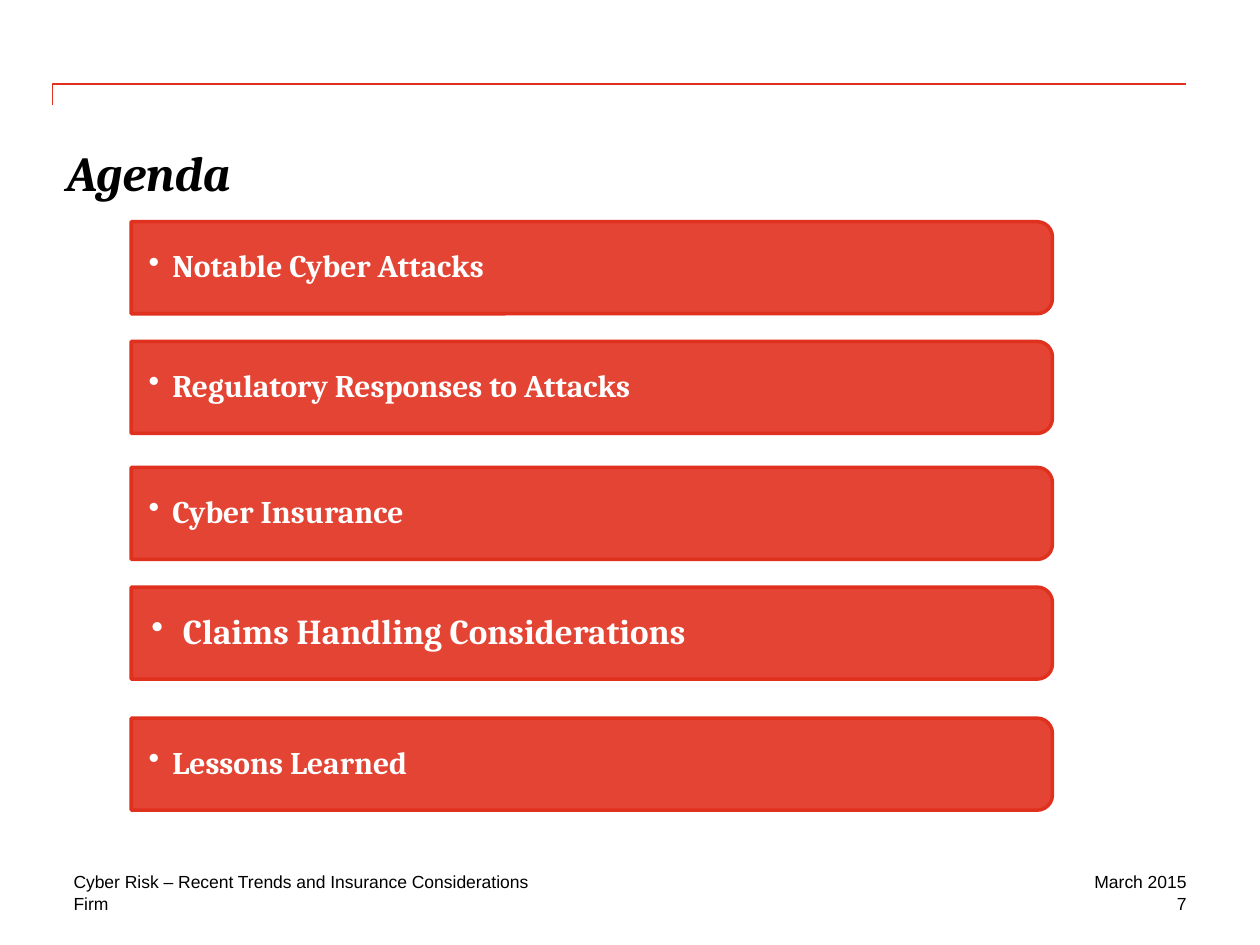
from dataclasses import dataclass

import lxml.etree
import pptx
import pptx.dml.color
import pptx.enum.shapes
import pptx.enum.text
import pptx.oxml.ns
import pptx.util

Pt = pptx.util.Pt
qn = pptx.oxml.ns.qn
ALIGN = pptx.enum.text.PP_ALIGN
ANCHOR = pptx.enum.text.MSO_ANCHOR
SHAPE = pptx.enum.shapes.MSO_SHAPE
CONNECTOR = pptx.enum.shapes.MSO_CONNECTOR

COLORS = {"red": "E0301E", "text": "000000", "bar_text": "FFFFFF"}
BAR_LEFT, BAR_WIDTH, BAR_HEIGHT = 75, 526.4, 52.6
LABEL_WIDTH, LABEL_HEIGHT = 524, 47.5


@dataclass
class AgendaItem:
    text: str
    top: float
    size: float = 18
    inset: float = 10
    indent: float = 13.5


@dataclass
class FooterText:
    text: str
    left: float
    top: float
    width: float
    align: ALIGN = ALIGN.LEFT
    anchor: ANCHOR = ANCHOR.TOP


AGENDA = [
    AgendaItem("Notable Cyber Attacks", 126.7),
    AgendaItem("Regulatory Responses to Attacks", 195.1),
    AgendaItem("Cyber Insurance", 267.1),
    AgendaItem("Claims Handling Considerations", 335.5, 20, 11.5, 18),
    AgendaItem("Lessons Learned", 410.4),
]
FOOTERS = [
    FooterText("Firm", 42, 510, 204),
    FooterText("7", 558, 510, 120, ALIGN.RIGHT),
    FooterText("March 2015", 558, 498, 120, ALIGN.RIGHT),
    FooterText("Cyber Risk – Recent Trends and Insurance Considerations",
               42, 498, 414, anchor=ANCHOR.BOTTOM),
]


def rgb(name: str) -> pptx.dml.color.RGBColor:
    return pptx.dml.color.RGBColor.from_string(COLORS[name])


def set_text(sp, text: str, font: str, size: float, color: str,
             bold: bool = False, italic: bool = False,
             insets: tuple = (0, 0, 0, 0), anchor: ANCHOR = ANCHOR.TOP):
    tf = sp.text_frame
    tf.word_wrap = True
    tf.auto_size = pptx.enum.text.MSO_AUTO_SIZE.NONE
    tf.vertical_anchor = anchor
    tf.margin_left, tf.margin_top, tf.margin_right, tf.margin_bottom = map(Pt, insets)
    tf.text = text
    p = tf.paragraphs[0]
    f = p.runs[0].font
    f.name, f.size, f.bold, f.italic = font, Pt(size), bold, italic
    f.color.rgb = rgb(color)
    return p


def add_title(s, text: str) -> None:
    sp = s.shapes.title
    sp.left, sp.top, sp.width, sp.height = Pt(38), Pt(81.5), Pt(644), Pt(33)
    p = set_text(sp, text, "Cambria", 28, "text", bold=True, italic=True)
    p.alignment = ALIGN.LEFT


def add_header_rule(s) -> None:
    cx = s.shapes.add_connector(CONNECTOR.ELBOW, Pt(360), Pt(378), Pt(348), Pt(-270))
    cx.line.color.rgb = rgb("red")
    cx.line.width = Pt(1)
    sp_pr = cx._element.spPr
    sp_pr.find(qn("a:xfrm")).set("rot", "5400000")
    sp_pr.find(qn("a:prstGeom")).set("prst", "bentConnector2")
    lxml.etree.SubElement(sp_pr, qn("a:effectLst"))


def add_bullet(p, indent: float) -> None:
    p_pr = p._p.get_or_add_pPr()
    p_pr.set("marL", str(Pt(indent)))
    p_pr.set("indent", str(-Pt(indent)))
    lxml.etree.SubElement(p_pr, qn("a:buChar")).set("char", "•")


def add_agenda_item(s, item: AgendaItem) -> None:
    center_x = BAR_LEFT + BAR_WIDTH / 2
    center_y = item.top + BAR_HEIGHT / 2
    bar = s.shapes.add_shape(
        SHAPE.ROUND_2_SAME_RECTANGLE,
        Pt(center_x - BAR_HEIGHT / 2), Pt(center_y - BAR_WIDTH / 2),
        Pt(BAR_HEIGHT), Pt(BAR_WIDTH))
    bar.rotation = 90
    bar.shadow.inherit = False
    bar.fill.solid()
    bar.fill.fore_color.rgb = rgb("red")
    color = bar._element.spPr.find(qn("a:solidFill"))[0]
    lxml.etree.SubElement(color, qn("a:alpha")).set("val", "90000")
    bar.line.color.rgb = rgb("red")
    bar.line.width = Pt(2)

    label = s.shapes.add_textbox(
        Pt(BAR_LEFT), Pt(center_y - LABEL_HEIGHT / 2), Pt(LABEL_WIDTH), Pt(LABEL_HEIGHT))
    p = set_text(label, item.text, "Cambria", item.size, "bar_text", bold=True,
                 insets=(item.inset, 0.9, 0.9, 0.9), anchor=ANCHOR.MIDDLE)
    p.level = 1
    p.line_spacing = 0.9
    add_bullet(p, item.indent)


def add_footer(s, footer: FooterText) -> None:
    sp = s.shapes.add_textbox(Pt(footer.left), Pt(footer.top), Pt(footer.width), Pt(12))
    p = set_text(sp, footer.text, "Arial", 10, "text", anchor=footer.anchor)
    p.alignment = footer.align


def main() -> None:
    prs = pptx.Presentation()
    prs.slide_width, prs.slide_height = Pt(720), Pt(540)
    s = prs.slides.add_slide(prs.slide_layouts[5])
    add_header_rule(s)
    add_title(s, "Agenda")
    for item in AGENDA:
        add_agenda_item(s, item)
    for footer in FOOTERS:
        add_footer(s, footer)
    prs.save("out.pptx")


if __name__ == "__main__":
    main()
